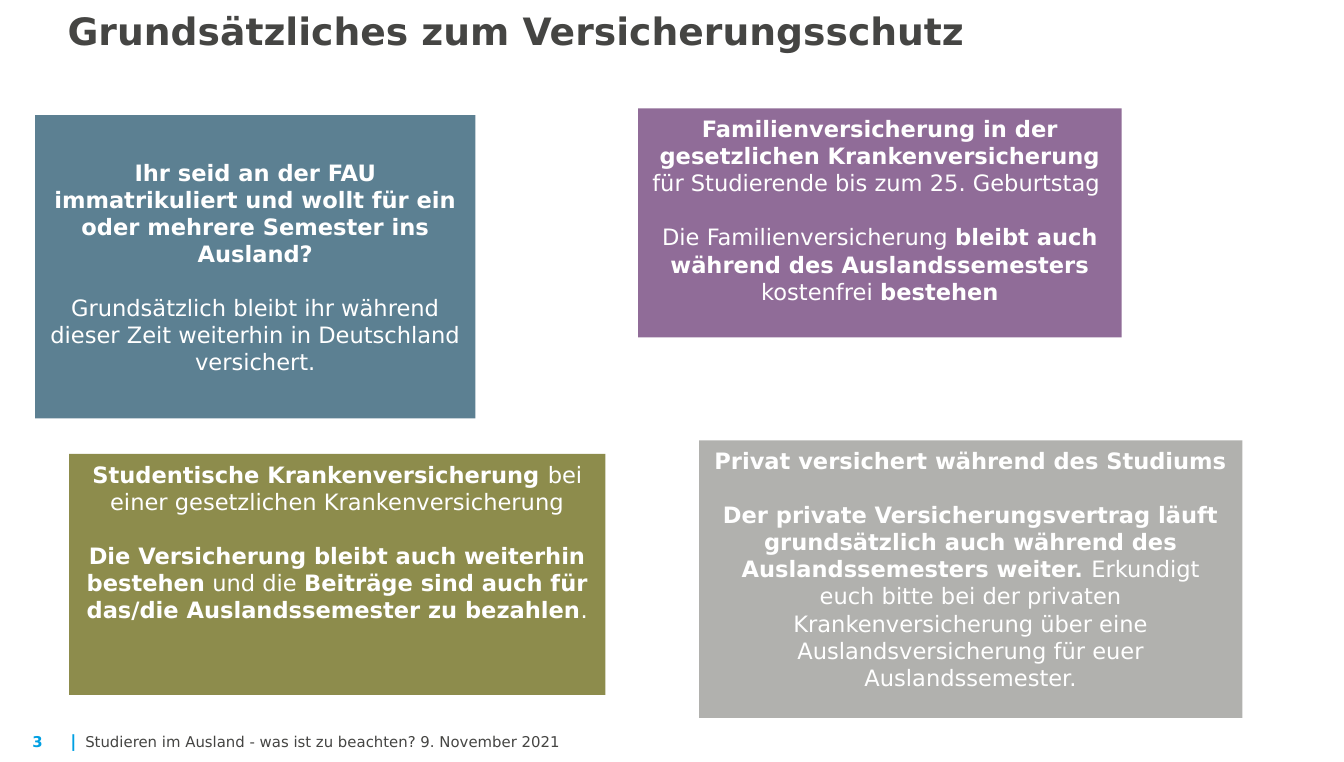
from lxml import etree
from pptx import Presentation
from pptx.dml.color import RGBColor
from pptx.enum import shapes, text
from pptx.oxml.ns import qn
from pptx.util import Inches, Pt

FONT = "DejaVu Sans"
WHITE = RGBColor(0xFF, 0xFF, 0xFF)
DARK_GREY = RGBColor(0x45, 0x45, 0x43)
CYAN = RGBColor(0x00, 0xA0, 0xE3)
OLIVE = RGBColor(0x5E, 0x5C, 0x00)
BLUE = RGBColor(0x00, 0x39, 0x55)
PURPLE = RGBColor(0x62, 0x2F, 0x6D)
GREY = RGBColor(0x90, 0x90, 0x8D)

TOP = text.MSO_ANCHOR.TOP
MIDDLE = text.MSO_ANCHOR.MIDDLE

CARDS = [
    ((0.51, 3.35, 3.96, 1.78), OLIVE, 70, TOP, [
        [("Studentische Krankenversicherung ", True),
         ("bei einer gesetzlichen Krankenversicherung", False)],
        [("Die Versicherung bleibt auch weiterhin bestehen", True),
         (" und die ", False),
         ("Beiträge sind auch für das/die Auslandssemester zu bezahlen", True),
         (".", False)],
    ]),
    ((0.26, 0.85, 3.25, 2.24), BLUE, 64, MIDDLE, [
        [("Ihr seid an der FAU immatrikuliert und wollt für ein oder mehrere "
          "Semester ins Ausland?", True)],
        [("Grundsätzlich bleibt ihr während dieser Zeit weiterhin in "
          "Deutschland versichert.", False)],
    ]),
    ((4.71, 0.8, 3.57, 1.69), PURPLE, 70, TOP, [
        [("Familienversicherung in der gesetzlichen Krankenversicherung ", True),
         ("für Studierende bis zum 25. Geburtstag ", False)],
        [("Die Familienversicherung ", False),
         ("bleibt auch während des Auslandssemesters ", True),
         ("kostenfrei ", False),
         ("bestehen", True)],
    ]),
    ((5.16, 3.25, 4.01, 2.05), GREY, 70, TOP, [
        [("Privat versichert während des Studiums", True)],
        [("Der private Versicherungsvertrag läuft grundsätzlich auch während "
          "des Auslandssemesters weiter. ", True),
         ("Erkundigt euch bitte bei der privaten Krankenversicherung über eine "
          "Auslandsversicherung für euer Auslandssemester.", False)],
    ]),
]

FOOTER = [
    ((0.24, 5.39, 0.24, 0.15), "3", 7.9, CYAN, True),
    ((0.52, 5.39, 0.06, 0.15), "|", 8.9, CYAN, True),
    ((0.63, 5.39, 9.06, 0.15),
     "Studieren im Ausland - was ist zu beachten? 9. November 2021",
     7.9, DARK_GREY, False),
]


def style_font(font, size, color, bold):
    font.name = FONT
    font.size = Pt(size)
    font.color.rgb = color
    font.bold = bold


def add_label(slide, bounds, wording, size, color, bold):
    label = slide.shapes.add_textbox(*map(Inches, bounds))
    frame = label.text_frame
    frame.word_wrap = True
    frame.text = wording
    style_font(frame.paragraphs[0].runs[0].font, size, color, bold)
    return frame


def add_title(slide):
    frame = add_label(slide, (0.4, 0, 7.95, 0.8),
                      "Grundsätzliches zum Versicherungsschutz", 20, DARK_GREY, True)
    frame.paragraphs[0].line_spacing = Pt(24.8)


def add_footer_label(slide, *label):
    frame = add_label(slide, *label)
    frame.vertical_anchor = text.MSO_ANCHOR.BOTTOM
    frame.margin_left = frame.margin_right = 0
    frame.margin_top = frame.margin_bottom = 0


def set_opacity(shape, percent):
    color = shape.fill._xPr.find(qn("a:solidFill"))[0]
    etree.SubElement(color, qn("a:alpha")).set("val", str(percent * 1000))


def add_card(slide, bounds, color, opacity, anchor, paragraphs):
    card = slide.shapes.add_shape(shapes.MSO_SHAPE.RECTANGLE, *map(Inches, bounds))
    card.shadow.inherit = False
    card.fill.solid()
    card.fill.fore_color.rgb = color
    set_opacity(card, opacity)
    card.line.fill.background()
    frame = card.text_frame
    frame.word_wrap = True
    frame.vertical_anchor = anchor
    for index, runs in enumerate(paragraphs):
        paragraph = frame.add_paragraph() if index else frame.paragraphs[0]
        paragraph.alignment = text.PP_ALIGN.CENTER
        if index:
            paragraph.space_before = Pt(14.4)
        for wording, bold in runs:
            run = paragraph.add_run()
            run.text = wording
            style_font(run.font, 12, WHITE, bold)


def main():
    presentation = Presentation()
    presentation.slide_width = Inches(9.92)
    presentation.slide_height = Pt(405)
    slide = presentation.slides.add_slide(presentation.slide_layouts[6])
    for label in FOOTER:
        add_footer_label(slide, *label)
    for card in CARDS:
        add_card(slide, *card)
    add_title(slide)
    presentation.save("out.pptx")


if __name__ == "__main__":
    main()
